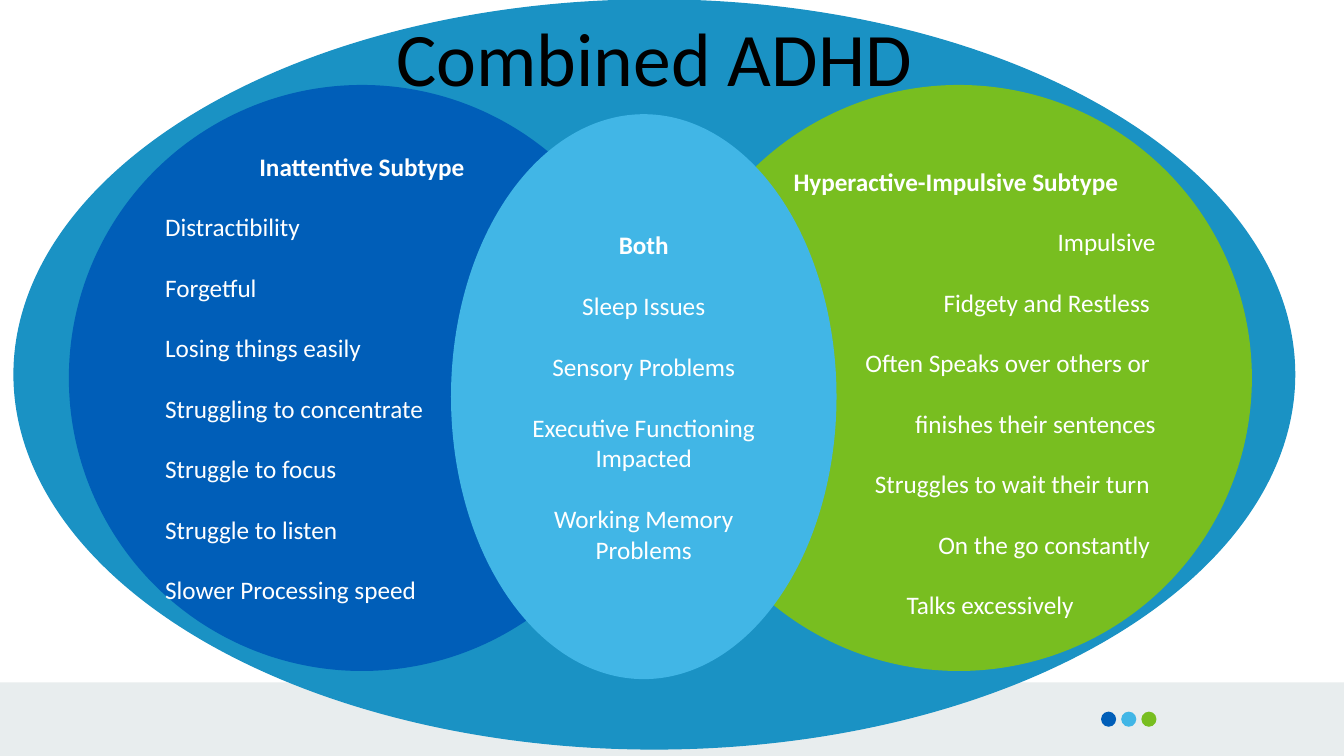
from pptx import Presentation
from pptx.dml.color import RGBColor
from pptx.enum.shapes import MSO_SHAPE
from pptx.enum.text import MSO_ANCHOR, PP_ALIGN
from pptx.util import Inches, Pt

OVAL, RECT = MSO_SHAPE.OVAL, MSO_SHAPE.RECTANGLE
MIDDLE, BOTTOM = MSO_ANCHOR.MIDDLE, MSO_ANCHOR.BOTTOM
LEFT, CENTER, RIGHT = PP_ALIGN.LEFT, PP_ALIGN.CENTER, PP_ALIGN.RIGHT
WIDTH, HEIGHT = Inches(13.33), Inches(7.5)
COLS, ROWS = 133.3, 75
NAVY, SKY, GREEN, TEAL = "005EB8", "41B6E6", "78BE20", "1A92C4"
WHITE, BLACK, GREY = "FFFFFF", "000000", "E8EDEE"


def color(code):
    return RGBColor.from_string(code)


class Deck:
    font = "Calibri"
    size = 18

    def __init__(self):
        self.show = Presentation()
        self.show.slide_width, self.show.slide_height = WIDTH, HEIGHT
        self.slide = self.show.slides.add_slide(self.show.slide_layouts[6])

    def box(self, x, y, w, h):
        col, row = WIDTH / COLS, HEIGHT / ROWS
        return [round(n) for n in (x * col, y * row, w * col, h * row)]

    def shape(self, kind, place, fill, line=False):
        item = self.slide.shapes.add_shape(kind, *self.box(*place))
        item.shadow.inherit = False
        item.fill.solid()
        item.fill.fore_color.rgb = color(fill)
        if line:
            item.line.color.rgb = color(fill)
            item.line.width = Pt(1)
        else:
            item.line.fill.background()
        return item

    def style(self, para, size, ink, align, bold=False):
        para.alignment = align
        para.font.name = self.font
        para.font.size = Pt(size)
        para.font.bold = bold
        para.font.color.rgb = color(ink)

    def group(self, place, fill, head, items, align, spacing=1, gap=0):
        frame = self.shape(OVAL, place, fill, True).text_frame
        frame.word_wrap = True
        frame.vertical_anchor = MIDDLE
        for i, text in enumerate([head, *items]):
            para = frame.add_paragraph() if i else frame.paragraphs[0]
            para.text = text
            self.style(para, self.size, WHITE, align if i else CENTER, i == 0)
            para.line_spacing = spacing
            para.space_before = Pt(gap if i else 0)
        return frame

    def title(self, place, text, size):
        frame = self.slide.shapes.add_textbox(*self.box(*place)).text_frame
        frame.word_wrap = True
        frame.vertical_anchor = BOTTOM
        frame.margin_left = frame.margin_right = 0
        frame.margin_top = frame.margin_bottom = 0
        para = frame.paragraphs[0]
        para.text = text
        self.style(para, size, BLACK, CENTER)
        para.line_spacing = 0.9


def main():
    deck = Deck()
    deck.shape(RECT, (0, 67.7, COLS, 7.3), GREY)
    for i, fill in enumerate((NAVY, SKY, GREEN)):
        deck.shape(OVAL, (109.2 + 2 * i, 70.6, 1.5, 1.5), fill)
    deck.shape(OVAL, (1.4, 0, 127, 74.3), TEAL, True)

    left = deck.group((6.9, 8.5, 58, 58), NAVY, "Inattentive Subtype", [
        "Distractibility",
        "Forgetful",
        "Losing things easily",
        "Struggling to concentrate",
        "Struggle to focus",
        "Struggle to listen",
        "Slower Processing speed",
    ], LEFT, spacing=2)
    left.margin_bottom = Inches(0.35)

    right = deck.group((66.1, 8.5, 58, 58), GREEN, "Hyperactive-Impulsive Subtype ", [
        "Impulsive",
        "Fidgety and Restless ",
        "Often Speaks over others or ",
        "finishes their sentences",
        "Struggles to wait their turn ",
        "On the go constantly ",
        "Talks excessively",
    ], RIGHT, spacing=2)
    last = right.paragraphs[-1]
    last.alignment = CENTER
    last._p.get_or_add_pPr().set("marL", str(Inches(0.62)))

    deck.group((44.8, 11.4, 38.1, 55.9), SKY, "Both", [
        "Sleep Issues",
        "Sensory Problems",
        "Executive Functioning Impacted",
        "Working Memory Problems",
    ], CENTER, gap=22)

    deck.title((15.6, 4.2, 98.6, 6), "Combined ADHD", 54)
    deck.show.save("out.pptx")


if __name__ == "__main__":
    main()
